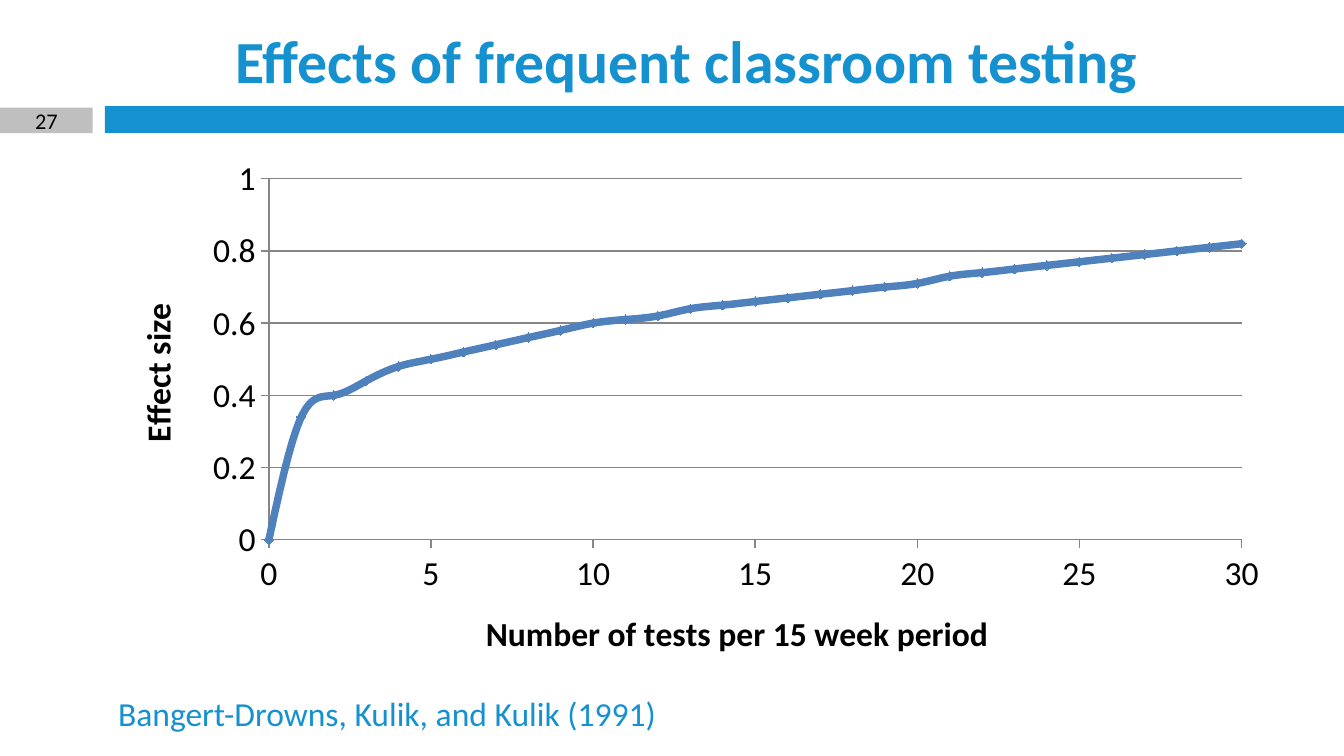
from dataclasses import dataclass

from lxml.etree import SubElement
from pptx import Presentation
from pptx.chart.data import XyChartData
from pptx.dml.color import RGBColor
from pptx.enum.chart import XL_CHART_TYPE, XL_MARKER_STYLE, XL_TICK_MARK
from pptx.enum.shapes import MSO_SHAPE
from pptx.enum.text import MSO_ANCHOR, PP_ALIGN
from pptx.oxml.ns import qn
from pptx.util import Inches, Pt


@dataclass(frozen=True)
class Theme:
    font: str = "Calibri"
    blue: RGBColor = RGBColor(0x16, 0x91, 0xD0)
    grey: RGBColor = RGBColor(0xBF, 0xBF, 0xBF)
    black: RGBColor = RGBColor(0, 0, 0)
    curve: RGBColor = RGBColor(0x4F, 0x81, 0xBD)
    gridline: RGBColor = RGBColor(0x86, 0x86, 0x86)
    title_size: int = 32
    body_size: int = 18
    number_size: int = 12


@dataclass(frozen=True)
class Box:
    left: float
    top: float
    width: float
    height: float

    def lengths(self):
        return [Inches(v) for v in (self.left, self.top, self.width, self.height)]


@dataclass(frozen=True)
class AxisSpec:
    title: str
    maximum: float
    step: float
    title_left: float
    title_top: float


THEME = Theme()
NUMBER_BOX = Box(0, 0.8, 0.69, 0.19)
BANDS = [(Box(0.78, 0.79, 9.22, 0.2), THEME.blue), (NUMBER_BOX, THEME.grey)]
TESTS_AXIS = AxisSpec("Number of tests per 15 week period", 30, 5, 0.32, 0.85)
EFFECT_AXIS = AxisSpec("Effect size", 1, 0.2, 0.02, 0.28)
EFFECT_SIZES = [
    0, 0.34, 0.4, 0.44, 0.48, 0.5, 0.52, 0.54, 0.56, 0.58,
    0.6, 0.61, 0.62, 0.64, 0.65, 0.66, 0.67, 0.68, 0.69, 0.7,
    0.71, 0.73, 0.74, 0.75, 0.76, 0.77, 0.78, 0.79, 0.8, 0.81, 0.82,
]


def add_band(slide, box: Box, color: RGBColor) -> None:
    band = slide.shapes.add_shape(MSO_SHAPE.RECTANGLE, *box.lengths())
    band.shadow.inherit = False
    band.fill.solid()
    band.fill.fore_color.rgb = color
    band.line.fill.background()


def style_font(font, size: int, color: RGBColor, bold: bool = False) -> None:
    font.name = THEME.font
    font.size = Pt(size)
    font.bold = bold
    font.color.rgb = color


def add_text(slide, text: str, box: Box, *, size: int, color: RGBColor, bold: bool = False,
             align=PP_ALIGN.LEFT, anchor=MSO_ANCHOR.TOP, inset: float = 0.05) -> None:
    frame = slide.shapes.add_textbox(*box.lengths()).text_frame
    frame.word_wrap = True
    frame.vertical_anchor = anchor
    frame.margin_top = frame.margin_bottom = Inches(inset)
    paragraph = frame.paragraphs[0]
    paragraph.alignment = align
    run = paragraph.add_run()
    run.text = text
    style_font(run.font, size, color, bold)


def place(parent, index: int, **fractions: float) -> None:
    for existing in parent.findall(qn("c:layout")):
        parent.remove(existing)
    layout = SubElement(parent, qn("c:layout"))
    parent.insert(index, layout)
    manual = SubElement(layout, qn("c:manualLayout"))
    settings = {"xMode": "edge", "yMode": "edge", **fractions}
    if "w" in fractions:
        settings = {"layoutTarget": "inner", **settings}
    for name, value in settings.items():
        SubElement(manual, qn(f"c:{name}")).set("val", str(value))


def style_axis(axis, spec: AxisSpec) -> None:
    axis.minimum_scale = 0
    axis.maximum_scale = spec.maximum
    axis.major_unit = spec.step
    axis.major_tick_mark = XL_TICK_MARK.OUTSIDE
    axis.minor_tick_mark = XL_TICK_MARK.NONE
    axis.tick_labels.number_format = "General"
    axis.tick_labels.number_format_is_linked = False
    style_font(axis.tick_labels.font, THEME.body_size, THEME.black)
    axis.format.line.color.rgb = THEME.gridline
    axis.format.line.width = Pt(0.75)
    frame = axis.axis_title.text_frame
    frame.text = spec.title
    style_font(frame.paragraphs[0].runs[0].font, THEME.body_size, THEME.black, bold=True)
    place(axis.axis_title._element, 1, x=spec.title_left, y=spec.title_top)


def add_effect_chart(slide, box: Box) -> None:
    data = XyChartData()
    effects = data.add_series("Series 1")
    for tests, effect in enumerate(EFFECT_SIZES):
        effects.add_data_point(tests, effect)
    chart = slide.shapes.add_chart(XL_CHART_TYPE.XY_SCATTER_SMOOTH, *box.lengths(), data).chart
    chart.has_legend = False
    chart.has_title = False
    style_font(chart.font, THEME.body_size, THEME.black)
    chart.plots[0].vary_by_categories = False

    style_axis(chart.category_axis, TESTS_AXIS)
    style_axis(chart.value_axis, EFFECT_AXIS)
    chart.category_axis.has_major_gridlines = False
    chart.value_axis.has_major_gridlines = True
    gridline = chart.value_axis.major_gridlines.format.line
    gridline.color.rgb = THEME.gridline
    gridline.width = Pt(0.75)
    effect_title = chart.value_axis.axis_title._element
    effect_title.find(f".//{qn('a:bodyPr')}").set("rot", "-5400000")
    plot_area = chart._chartSpace.find(f".//{qn('c:plotArea')}")
    place(plot_area, 0, x=0.14, y=0.06, w=0.83, h=0.67)

    curve = chart.plots[0].series[0]
    for smooth in curve._element.findall(qn("c:smooth")):
        curve._element.remove(smooth)
    SubElement(curve._element, qn("c:smooth")).set("val", "1")
    curve.format.line.color.rgb = THEME.curve
    curve.format.line.width = Pt(4)
    curve.marker.style = XL_MARKER_STYLE.DIAMOND
    curve.marker.size = 5
    curve.marker.format.fill.solid()
    curve.marker.format.fill.fore_color.rgb = THEME.curve
    curve.marker.format.line.color.rgb = THEME.curve


def main() -> None:
    deck = Presentation()
    deck.slide_width = Inches(10)
    deck.slide_height = deck.slide_width * 9 // 16
    slide = deck.slides.add_slide(deck.slide_layouts[6])
    for box, color in BANDS:
        add_band(slide, box, color)
    add_text(slide, "Effects of frequent classroom testing", Box(0.78, 0.19, 8.66, 0.51),
             size=THEME.title_size, color=THEME.blue, bold=True,
             align=PP_ALIGN.CENTER, anchor=MSO_ANCHOR.MIDDLE)
    add_text(slide, "27", NUMBER_BOX, size=THEME.number_size, color=THEME.black,
             align=PP_ALIGN.CENTER, anchor=MSO_ANCHOR.MIDDLE, inset=0)
    add_effect_chart(slide, Box(0.78, 1.09, 8.72, 4.01))
    add_text(slide, "Bangert-Drowns, Kulik, and Kulik (1991)", Box(0.78, 5.11, 4.95, 0.4),
             size=THEME.body_size, color=THEME.blue)
    deck.save("out.pptx")


if __name__ == "__main__":
    main()
